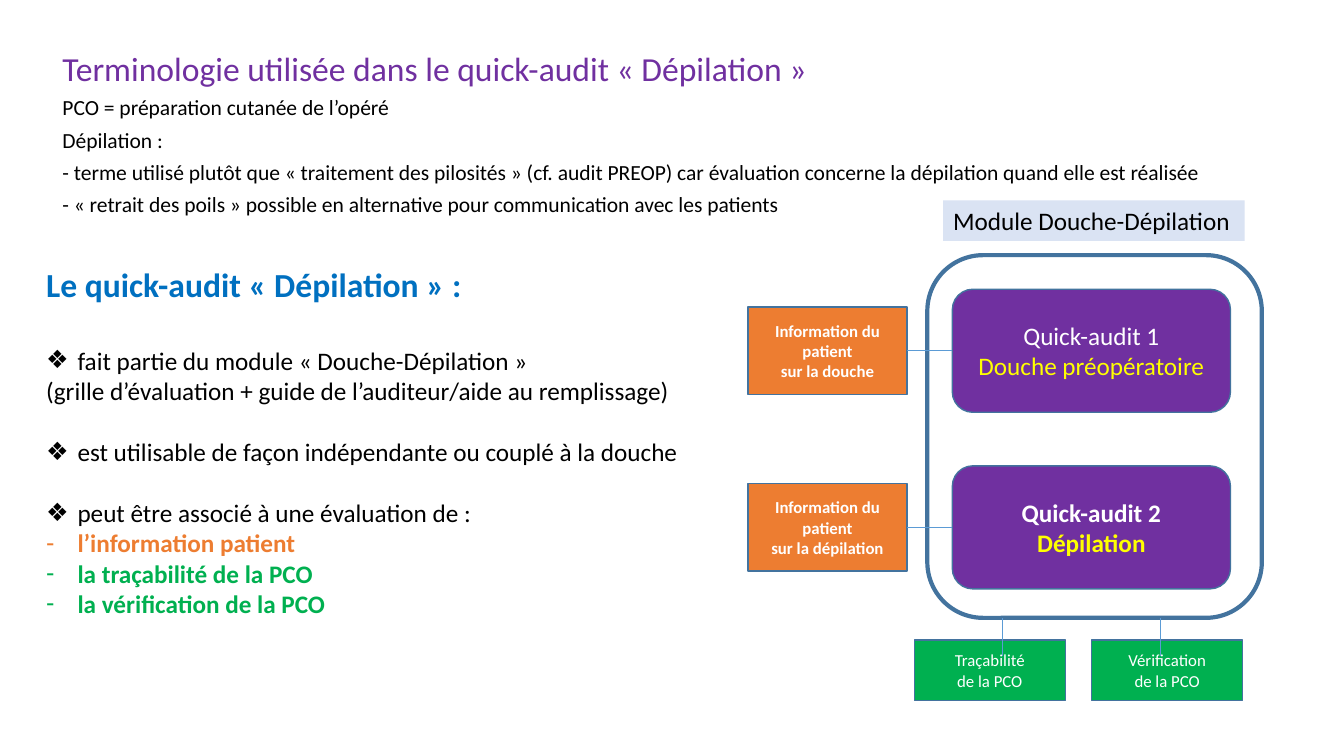
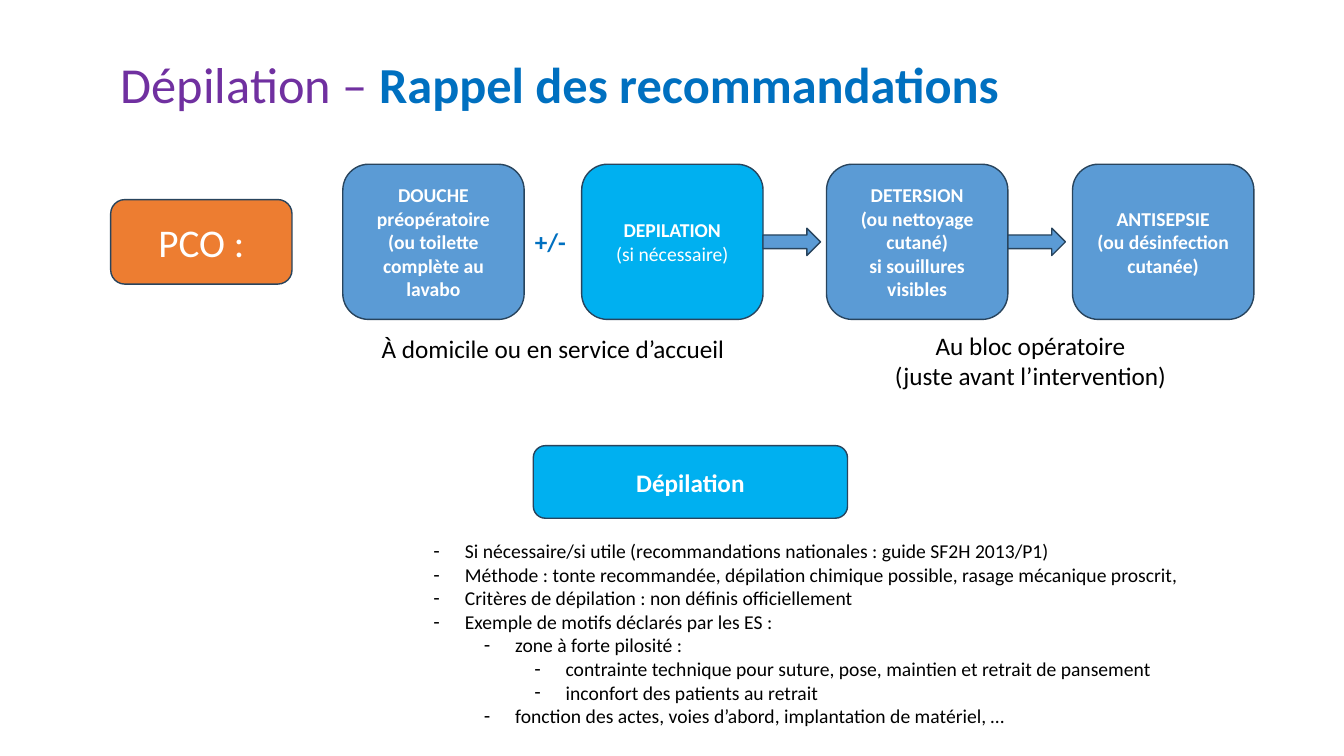
from dataclasses import dataclass

from lxml import etree
from pptx import Presentation
from pptx.dml.color import RGBColor
from pptx.enum.shapes import MSO_CONNECTOR, MSO_SHAPE
from pptx.enum.text import MSO_ANCHOR, MSO_AUTO_SIZE, PP_ALIGN
from pptx.oxml.ns import qn
from pptx.util import Cm, Pt

LEFT, CENTER = PP_ALIGN.LEFT, PP_ALIGN.CENTER
TOP, MIDDLE = MSO_ANCHOR.TOP, MSO_ANCHOR.MIDDLE
RECT, ROUNDED = MSO_SHAPE.RECTANGLE, MSO_SHAPE.ROUNDED_RECTANGLE
ARROW = MSO_SHAPE.RIGHT_ARROW
STRAIGHT = MSO_CONNECTOR.STRAIGHT


@dataclass(frozen=True)
class Theme:
    font: str = "Calibri"
    black: str = "000000"
    white: str = "FFFFFF"
    purple: str = "7030A0"
    blue: str = "0070C0"
    sky: str = "00B0F0"
    steel: str = "5B9BD5"
    pale: str = "DAE3F3"
    orange: str = "ED7D31"
    green: str = "00B050"
    yellow: str = "FFFF00"
    module_edge: str = "43739E"
    step_edge: str = "28445D"
    title: float = 36
    banner: float = 28
    heading: float = 24
    definition: float = 15.4
    body: float = 18
    detail: float = 14
    small: float = 12
    bullet_indent: float = 0.79
    level_indent: float = 1.27


theme = Theme()


def write(frame, lines, anchor=TOP, **shared):
    """Fill a text frame; a line is a string or a (string, own style) pair."""
    frame.word_wrap = True
    frame.auto_size = MSO_AUTO_SIZE.NONE
    frame.vertical_anchor = anchor
    for index, line in enumerate(lines):
        text, own = (line, {}) if isinstance(line, str) else line
        style = {"size": theme.body, "color": theme.black, **shared, **own}
        paragraph = frame.add_paragraph() if index else frame.paragraphs[0]
        paragraph.text = text
        paragraph.alignment = style.get("align", LEFT)
        paragraph.level = style.get("level", 0)
        paragraph.line_spacing = style.get("spacing", 1.0)
        paragraph.space_before = Pt(style.get("before", 0))
        properties = paragraph._p.get_or_add_pPr()
        bullet = style.get("bullet")
        indent = theme.bullet_indent if bullet else 0
        margin = indent + paragraph.level * theme.level_indent
        properties.set("marL", str(Cm(margin)))
        properties.set("indent", str(-Cm(indent)))
        if bullet:
            etree.SubElement(properties, qn("a:buChar")).set("char", bullet)
        else:
            etree.SubElement(properties, qn("a:buNone"))
        font = paragraph.font
        font.name = theme.font
        font.size = Pt(style["size"])
        font.bold = style.get("bold", False)
        font.color.rgb = RGBColor.from_string(style["color"])


def add_block(slide, kind, area, fill, edge, lines=(), edge_width=1, **style):
    """Add a preset shape; a fill or edge of None is left out."""
    block = slide.shapes.add_shape(kind, *map(Cm, area))
    block.shadow.inherit = False
    if fill:
        block.fill.solid()
        block.fill.fore_color.rgb = RGBColor.from_string(fill)
    else:
        block.fill.background()
    if edge:
        block.line.color.rgb = RGBColor.from_string(edge)
        block.line.width = Pt(edge_width)
    else:
        block.line.fill.background()
    write(block.text_frame, lines,
          **{"anchor": MIDDLE, "align": CENTER, "color": theme.white, **style})


prs = Presentation()
prs.slide_width, prs.slide_height = Cm(33.87), Cm(19.05)

# Slide 1: terminology and the audit module
terms = prs.slides.add_slide(prs.slide_layouts[3])
heading, definitions, audit = terms.placeholders
for holder, area in (
    (heading, (1.32, 1.35, 31.22, 1.08)),
    (definitions, (1.32, 2.43, 31.22, 3.89)),
    (audit, (0.91, 6.53, 18.11, 9.25)),
):
    holder.left, holder.top, holder.width, holder.height = map(Cm, area)

write(heading.text_frame, ["Terminologie utilisée dans le quick-audit « Dépilation »"],
      size=theme.heading, color=theme.purple, spacing=0.7)
write(definitions.text_frame, [
    ("PCO = préparation cutanée de l’opéré", {"before": 0}),
    "Dépilation :",
    "- terme utilisé plutôt que « traitement des pilosités » (cf. audit PREOP) "
    "car évaluation concerne la dépilation quand elle est réalisée",
    "- « retrait des poils » possible en alternative pour communication avec les patients",
], size=theme.definition, spacing=0.7, before=10)

point = {"bullet": "❖", "before": 22}
traced = {"bullet": "-", "bold": True, "color": theme.green}
write(audit.text_frame, [
    ("Le quick-audit « Dépilation » :",
     {"size": theme.heading, "color": theme.blue, "bold": True}),
    ("fait partie du module « Douche-Dépilation »", {**point, "before": 29}),
    "(grille d’évaluation + guide de l’auditeur/aide au remplissage)",
    ("est utilisable de façon indépendante ou couplé à la douche", point),
    ("peut être associé à une évaluation de :", point),
    ("l’information patient", {**traced, "color": theme.orange}),
    ("la traçabilité de la PCO", traced),
    ("la vérification de la PCO", traced),
])

module_left, module_height = 24, 3.1
info_left, info_width, info_height = 18.85, 4.01, 2.21
frame_top, frame_height = 6.43, 9.14
links = []
for row, (name, topic, subject, bold) in enumerate((
    ("Quick-audit 1", "Douche préopératoire", "sur la douche", False),
    ("Quick-audit 2", "Dépilation", "sur la dépilation", True),
)):
    top = 7.29 + row * 4.45
    middle = top + module_height / 2
    add_block(terms, ROUNDED, (module_left, top, 7.01, module_height),
              theme.purple, theme.module_edge,
              [name, (topic, {"color": theme.yellow})], bold=bold)
    add_block(terms, RECT, (info_left, middle - info_height / 2, info_width, info_height),
              theme.orange, theme.module_edge,
              ["Information du patient", subject], size=theme.small, bold=True)
    links.append((info_left + info_width, middle, module_left, middle))

add_block(terms, ROUNDED, (23.37, frame_top, 8.43, frame_height),
          None, theme.module_edge, edge_width=3)
for left, link_x, check in (
    (23.04, 25.25, "Traçabilité"),
    (27.51, 29.24, "Vérification"),
):
    add_block(terms, RECT, (left, 16.13, 3.81, 1.52), theme.green, theme.module_edge,
              [check, "de la PCO"], size=theme.small)
    frame_bottom = frame_top + frame_height
    links.append((link_x, frame_bottom, link_x, frame_bottom + 0.95))

for ends in links:
    link = terms.shapes.add_connector(STRAIGHT, *map(Cm, ends))
    link.line.color.rgb = RGBColor.from_string(theme.steel)
    link.line.width = Pt(0.5)
    etree.SubElement(link._element.spPr, qn("a:effectLst"))

add_block(terms, RECT, (23.77, 5.05, 7.6, 1.02), theme.pale, None,
          ["Module Douche-Dépilation"], color=theme.black, align=LEFT)

# Slide 2: reminder of the recommendations
advice = prs.slides.add_slide(prs.slide_layouts[1])
title, criteria = advice.placeholders
for holder, area in (
    (title, (2.79, 0.36, 29.21, 3.68)),
    (criteria, (10.67, 13.46, 19.63, 5.05)),
):
    holder.left, holder.top, holder.width, holder.height = map(Cm, area)

write(title.text_frame, ["Dépilation – "], anchor=MIDDLE,
      size=theme.title, color=theme.purple, spacing=0.9)
reminder = title.text_frame.paragraphs[0].add_run()
reminder.text = "Rappel des recommandations"
reminder.font.bold = True
reminder.font.color.rgb = RGBColor.from_string(theme.blue)

add_block(advice, ROUNDED, (2.79, 5.03, 4.57, 2.13), theme.orange, theme.step_edge,
          ["PCO :"], size=theme.banner)

step_top, step_width, step_height = 4.14, 4.57, 3.91
arrow_height = 0.69
for left, fill, lines, leads_on in (
    (8.64, theme.steel,
     ["DOUCHE", "préopératoire", "(ou toilette complète au lavabo"], False),
    (14.66, theme.sky, ["DEPILATION", ("(si nécessaire)", {"bold": False})], True),
    (20.83, theme.steel,
     ["DETERSION", "(ou nettoyage cutané)", "si souillures visibles"], True),
    (27.03, theme.steel, ["ANTISEPSIE", "(ou désinfection cutanée)"], False),
):
    add_block(advice, ROUNDED, (left, step_top, step_width, step_height),
              fill, theme.step_edge, lines, size=theme.detail, bold=True)
    if leads_on:
        arrow_top = step_top + (step_height - arrow_height) / 2
        add_block(advice, ARROW, (left + step_width, arrow_top, 1.45, arrow_height),
                  theme.steel, theme.step_edge)

for area, lines, style in (
    ((13.23, 5.59, 1.5, 1.02), ["+/-"], {"color": theme.blue, "bold": True}),
    ((9.37, 8.28, 9.25, 1.02), ["À domicile ou en service d’accueil"], {}),
    ((22.12, 8.2, 7.7, 1.8), ["Au bloc opératoire", "(juste avant l’intervention)"],
     {"align": CENTER}),
):
    caption = advice.shapes.add_textbox(*map(Cm, area))
    write(caption.text_frame, lines, **style)

add_block(advice, ROUNDED, (13.44, 11.23, 7.92, 1.83), theme.sky, theme.step_edge,
          ["Dépilation"], bold=True)
write(criteria.text_frame, [
    "Si nécessaire/si utile (recommandations nationales : guide SF2H 2013/P1)",
    "Méthode : tonte recommandée, dépilation chimique possible, rasage mécanique proscrit,",
    "Critères de dépilation : non définis officiellement",
    "Exemple de motifs déclarés par les ES :",
    ("zone à forte pilosité :", {"level": 1}),
    ("contrainte technique pour suture, pose, maintien et retrait de pansement", {"level": 2}),
    ("inconfort des patients au retrait", {"level": 2}),
    ("fonction des actes, voies d’abord, implantation de matériel, …", {"level": 1}),
], size=theme.detail, bullet="-")

prs.save("out.pptx")
